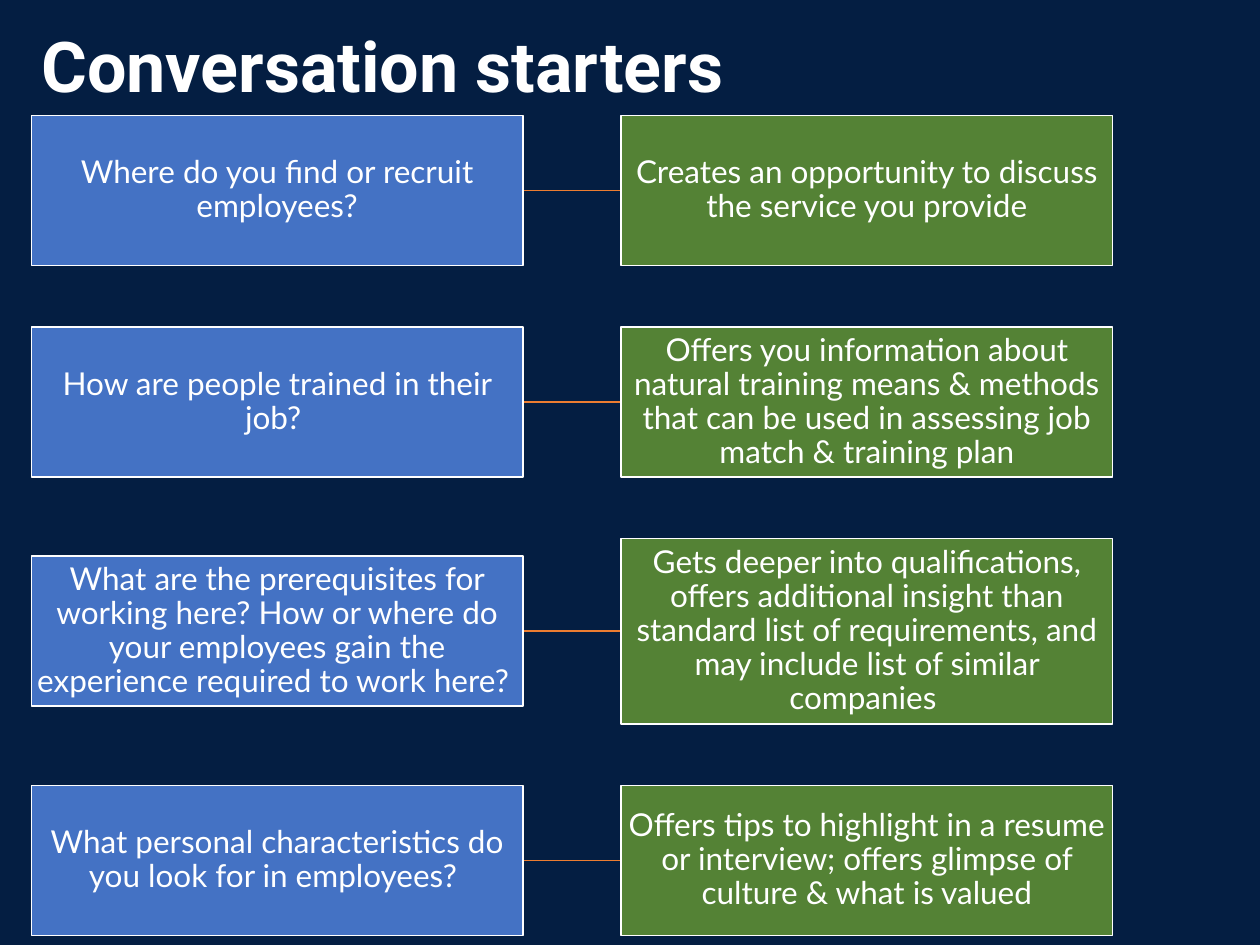
from lxml import etree
from pptx import Presentation
from pptx.dml.color import RGBColor
from pptx.enum.shapes import MSO_CONNECTOR, MSO_SHAPE
from pptx.enum.text import MSO_ANCHOR, PP_ALIGN
from pptx.oxml.ns import qn
from pptx.util import Pt

RECTANGLE = MSO_SHAPE.RECTANGLE
STRAIGHT = MSO_CONNECTOR.STRAIGHT
MIDDLE = MSO_ANCHOR.MIDDLE
LEFT, CENTER = PP_ALIGN.LEFT, PP_ALIGN.CENTER

NAVY, WHITE, BLUE, GREEN, ORANGE = "041E42", "FFFFFF", "4472C4", "548235", "ED7D31"
TITLE_FONT = {"name": "Roboto", "size": Pt(40), "bold": True}
BOX_FONT = {"name": "Lato", "size": Pt(18), "bold": False}

BOX_WIDTH, BOX_HEIGHT, TALL_HEIGHT = 280.8, 85.7, 105.9
COLUMN_GAP, ROW_GAP = 56.2, 35.2

# Question, its height, benefit, its height
STARTERS = [
    ("Where do you find or recruit employees?", BOX_HEIGHT,
     "Creates an opportunity to discuss the service you provide", BOX_HEIGHT),
    ("How are people trained in their job? ", BOX_HEIGHT,
     "Offers you information about natural training means & methods that can "
     "be used in assessing job match & training plan", BOX_HEIGHT),
    ("What are the prerequisites for working here? How or where do your "
     "employees gain the experience required to work here? ", BOX_HEIGHT,
     "Gets deeper into qualifications, offers additional insight than standard "
     "list of requirements, and may include list of similar companies ", TALL_HEIGHT),
    ("What personal characteristics do you look for in employees? ", BOX_HEIGHT,
     "Offers tips to highlight in a resume or interview; offers glimpse of "
     "culture & what is valued", BOX_HEIGHT),
]


def color(hex_value):
    return RGBColor.from_string(hex_value)


def write_text(frame, text, font_format, alignment, inset_x, inset_y):
    frame_format = {
        "word_wrap": True, "vertical_anchor": MIDDLE,
        "margin_left": Pt(inset_x), "margin_right": Pt(inset_x),
        "margin_top": Pt(inset_y), "margin_bottom": Pt(inset_y),
    }
    for key, value in frame_format.items():
        setattr(frame, key, value)
    paragraph = frame.paragraphs[0]
    paragraph.alignment = alignment
    paragraph.line_spacing = 0.9
    run = paragraph.add_run()
    run.text = text
    for key, value in font_format.items():
        setattr(run.font, key, value)
    run.font.color.rgb = color(WHITE)


def add_title(slide, left, top, width, height):
    title = slide.shapes.add_textbox(Pt(left), Pt(top), Pt(width), Pt(height))
    write_text(title.text_frame, "Conversation starters", TITLE_FONT, LEFT, 7.2, 3.6)


def add_link(slide, left, right, middle):
    link = slide.shapes.add_connector(STRAIGHT, Pt(left), Pt(middle), Pt(right), Pt(middle))
    link.line.color.rgb = color(ORANGE)
    link.line.width = Pt(1)
    properties = link._element.find(qn("p:spPr"))
    etree.SubElement(properties, qn("a:effectLst"))


def add_box(slide, text, fill, left, middle, height):
    box = slide.shapes.add_shape(
        RECTANGLE, Pt(left), Pt(middle - height / 2), Pt(BOX_WIDTH), Pt(height))
    box.shadow.inherit = False
    box.fill.solid()
    box.fill.fore_color.rgb = color(fill)
    box.line.color.rgb = color(WHITE)
    box.line.width = Pt(1)
    write_text(box.text_frame, text, BOX_FONT, CENTER, 0.9, 0.9)


def add_starters(slide, left, top):
    benefit_left = left + BOX_WIDTH + COLUMN_GAP
    for question, question_height, benefit, benefit_height in STARTERS:
        row_height = max(question_height, benefit_height)
        middle = top + row_height / 2
        add_link(slide, left + BOX_WIDTH, benefit_left, middle)
        add_box(slide, question, BLUE, left, middle, question_height)
        add_box(slide, benefit, GREEN, benefit_left, middle, benefit_height)
        top += row_height + ROW_GAP


def main():
    presentation = Presentation()
    presentation.slide_width, presentation.slide_height = Pt(720), Pt(540)
    slide = presentation.slides.add_slide(presentation.slide_layouts[6])

    # Background
    slide.background.fill.solid()
    slide.background.fill.fore_color.rgb = color(NAVY)

    # Title, then questions linked to their benefits
    add_title(slide, 16.6, -12.2, 620.6, 104.4)
    add_starters(slide, 18, 66)
    presentation.save("out.pptx")


if __name__ == "__main__":
    main()
